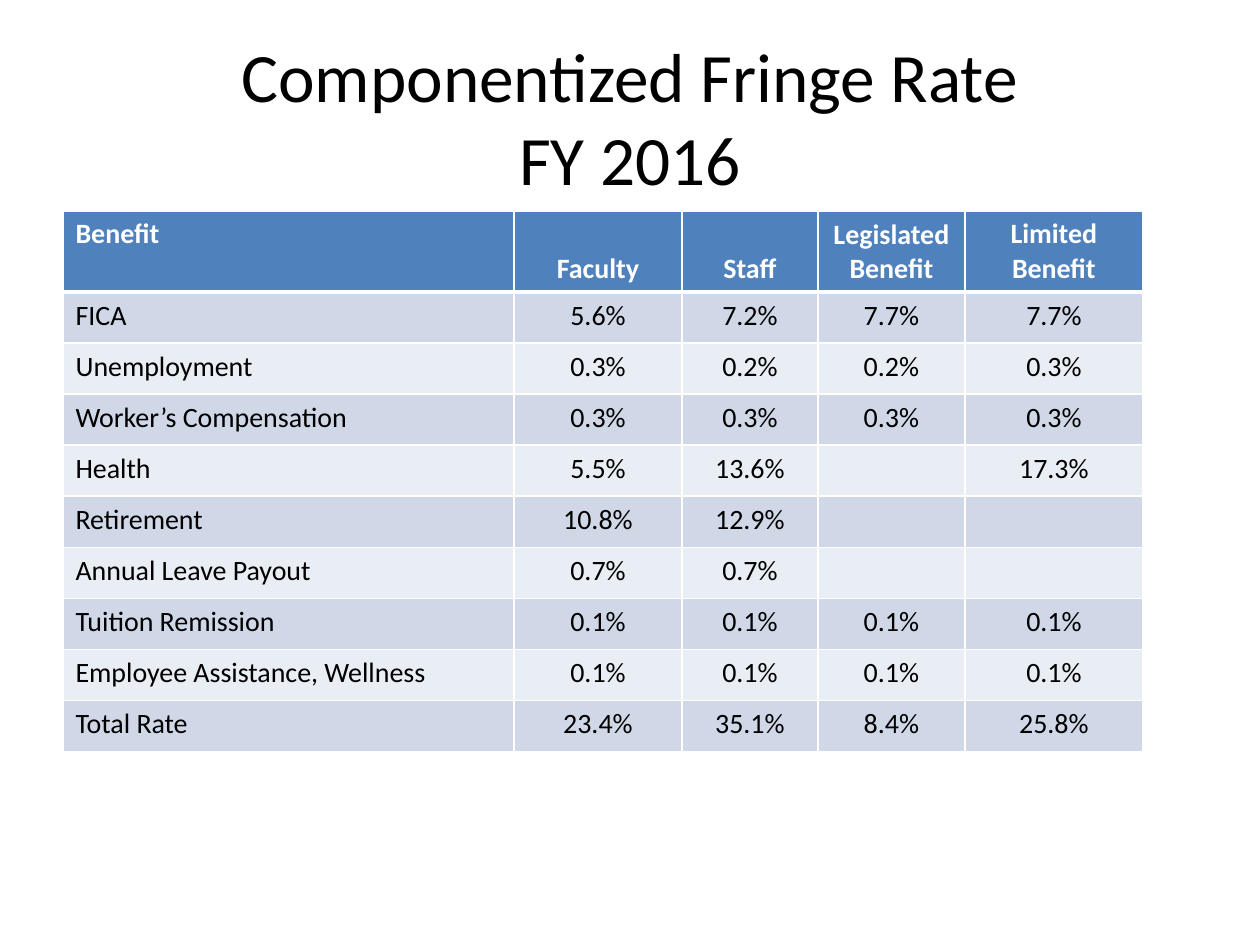
import pptx
import pptx.util
import pptx.dml.color
import pptx.enum.text
import pptx.oxml
import pptx.oxml.ns

RGBColor = pptx.dml.color.RGBColor
Align = pptx.enum.text.PP_ALIGN
Anchor = pptx.enum.text.MSO_ANCHOR

PX = 914400 // 126
FONT = "Calibri"
BLACK = RGBColor(0x00, 0x00, 0x00)
WHITE = RGBColor(0xFF, 0xFF, 0xFF)
BLUE = RGBColor(0x4F, 0x81, 0xBD)
BANDS = (RGBColor(0xD0, 0xD8, 0xE8), RGBColor(0xE9, 0xED, 0xF4))

TITLE = "Componentized Fringe Rate\vFY 2016"
COLUMN_WIDTHS = (451, 168, 136, 147, 178)
HEADER_HEIGHT, ROW_HEIGHT = 80, 51
HEADERS = ("Benefit", "Faculty", "Staff", "Legislated Benefit", "Limited Benefit")
HEADER_ANCHORS = (Anchor.TOP, Anchor.BOTTOM, Anchor.BOTTOM, Anchor.BOTTOM, Anchor.TOP)
RATES = (
    ("FICA", "5.6%", "7.2%", "7.7%", "7.7%"),
    ("Unemployment", "0.3%", "0.2%", "0.2%", "0.3%"),
    ("Worker’s Compensation", "0.3%", "0.3%", "0.3%", "0.3%"),
    ("Health", "5.5%", "13.6%", "", "17.3%"),
    ("Retirement", "10.8%", "12.9%", "", ""),
    ("Annual Leave Payout", "0.7%", "0.7%", "", ""),
    ("Tuition Remission", "0.1%", "0.1%", "0.1%", "0.1%"),
    ("Employee Assistance, Wellness", "0.1%", "0.1%", "0.1%", "0.1%"),
    ("Total Rate", "23.4%", "35.1%", "8.4%", "25.8%"),
)


def px(length):
    return pptx.util.Emu(length * PX)


def write_text(frame, text, size=16, color=BLACK, bold=False, align=Align.LEFT):
    frame.text = text
    para = frame.paragraphs[0]
    para.alignment = align
    for span in para.runs:
        span.font.name = FONT
        span.font.size = pptx.util.Pt(size)
        span.font.bold = bold
        span.font.color.rgb = color


def set_borders(cell, bottom=1):
    """Draw white cell borders; border lines must come before the fill."""
    properties = cell._tc.get_or_add_tcPr()
    widths = {"lnL": 1, "lnR": 1, "lnT": 1, "lnB": bottom}
    for position, (side, width) in enumerate(widths.items()):
        line = pptx.oxml.parse_xml(
            f'<a:{side} {pptx.oxml.ns.nsdecls("a")} w="{pptx.util.Pt(width)}">'
            f'<a:solidFill><a:srgbClr val="{WHITE}"/></a:solidFill></a:{side}>')
        properties.insert(position, line)


def fill_cell(cell, text, fill, anchor=Anchor.TOP, bottom=1, **text_format):
    write_text(cell.text_frame, text, **text_format)
    cell.vertical_anchor = anchor
    cell.fill.solid()
    cell.fill.fore_color.rgb = fill
    set_borders(cell, bottom)


def add_title(page):
    title = page.shapes.title
    title.left, title.top, title.width, title.height = px(63), px(38), px(1134), px(157)
    frame = title.text_frame
    write_text(frame, TITLE, size=39.6, align=Align.CENTER)
    frame.word_wrap = True
    frame.auto_size = pptx.enum.text.MSO_AUTO_SIZE.NONE
    frame.vertical_anchor = Anchor.MIDDLE


def add_rate_table(page):
    heights = [HEADER_HEIGHT] + [ROW_HEIGHT] * len(RATES)
    table = page.shapes.add_table(
        len(heights), len(HEADERS), px(63), px(211),
        px(sum(COLUMN_WIDTHS)), px(sum(heights))).table
    for column, width in zip(table.columns, COLUMN_WIDTHS):
        column.width = px(width)
    for row, height in zip(table.rows, heights):
        row.height = px(height)

    # Benefit names stay left, every other column is centred
    aligns = [Align.LEFT] + [Align.CENTER] * (len(HEADERS) - 1)
    for column, align in enumerate(aligns):
        fill_cell(table.cell(0, column), HEADERS[column], BLUE,
                  anchor=HEADER_ANCHORS[column], bottom=3,
                  color=WHITE, bold=True, align=align)
        for index, rates in enumerate(RATES):
            fill_cell(table.cell(index + 1, column), rates[column],
                      BANDS[index % 2], align=align)


def main():
    deck = pptx.Presentation()
    deck.slide_width, deck.slide_height = px(1260), px(945)
    page = deck.slides.add_slide(deck.slide_layouts.get_by_name("Title Only"))
    add_title(page)
    add_rate_table(page)
    deck.save("out.pptx")


if __name__ == "__main__":
    main()
